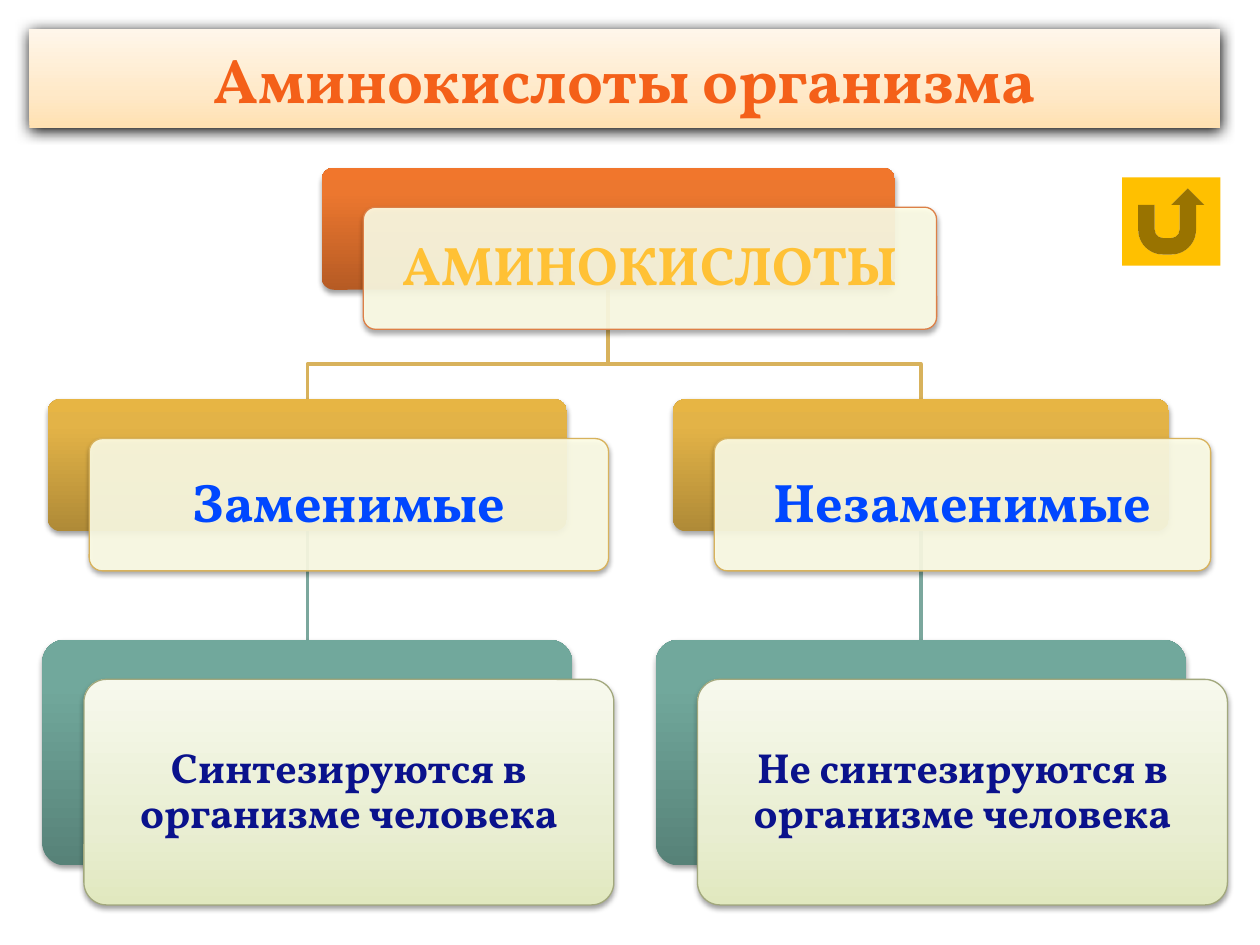
from lxml.etree import SubElement
from pptx import Presentation
from pptx.dml.color import RGBColor
from pptx.enum.shapes import MSO_CONNECTOR, MSO_SHAPE
from pptx.enum.text import MSO_ANCHOR, PP_ALIGN
from pptx.oxml.ns import qn
from pptx.util import Pt

FONT = "Vollkorn"
DX, DY = 23.8, 22.6
ROOT_X, ROOT_BOTTOM, BUS_Y, CHILD_TOP = 347.6, 165.6, 208, 228
ORANGE = [(0, "B65B24"), (80, "EC772F"), (100, "F1762C")]
GOLD = [(0, "AF8A37"), (80, "E3B347"), (100, "E7B544")]
TEAL = [(0, "578278"), (80, "71A89C"), (100, "70AA9D")]
PALE = [(0, "E1E8BF"), (35, "E9EED2"), (100, "F7F9ED")]
PEACH = [(0, "FFE1B2"), (35, "FFE9C8"), (100, "FFF6EA")]
BRANCHES = [
    (175.6, 296.8, "Заменимые", "Синтезируются в организме человека"),
    (526.2, 283.6, "Незаменимые", "Не синтезируются в организме человека"),
]


def rgb(color):
    return RGBColor.from_string(color)


def add_alpha(el, percent):
    SubElement(el, qn("a:alpha"), val=str(percent * 1000))


def set_fill(sp, fill):
    if isinstance(fill, str):
        sp.fill.solid()
        sp.fill.fore_color.rgb = rgb(fill)
        return
    sp.fill.gradient()
    sp.fill.gradient_angle = 90
    stops = sp._element.spPr.find(qn("a:gradFill")).find(qn("a:gsLst"))
    for gs in list(stops):
        stops.remove(gs)
    for pos, color in fill:
        gs = SubElement(stops, qn("a:gs"), pos=str(pos * 1000))
        SubElement(gs, qn("a:srgbClr"), val=color)


def set_shadow(sp, alpha, blur, dist):
    effects = sp._element.spPr.find(qn("a:effectLst"))
    shadow = SubElement(effects, qn("a:outerShdw"), blurRad=str(Pt(blur)),
                        dist=str(Pt(dist)), dir="5400000", rotWithShape="0")
    add_alpha(SubElement(shadow, qn("a:srgbClr"), val="000000"), alpha)


def add_box(slide, kind, x, y, w, h, fill, line=None):
    sp = slide.shapes.add_shape(kind, Pt(x), Pt(y), Pt(w), Pt(h))
    sp.shadow.inherit = False
    set_fill(sp, fill)
    if line:
        sp.line.color.rgb = rgb(line)
        sp.line.width = Pt(0.75)
    else:
        sp.line.fill.background()
    return sp


def set_text(sp, text, size, color, spacing=1.0, margin=7.2):
    tf = sp.text_frame
    tf.word_wrap = True
    tf.vertical_anchor = MSO_ANCHOR.MIDDLE
    tf.margin_left = tf.margin_right = Pt(margin)
    tf.margin_top = tf.margin_bottom = Pt(margin if spacing < 1 else 3.6)
    p = tf.paragraphs[0]
    p.text = text
    p.alignment = PP_ALIGN.CENTER
    p.line_spacing = spacing
    p.font.name = FONT
    p.font.size = Pt(size)
    p.font.bold = True
    p.font.color.rgb = rgb(color)


def add_node(slide, center, y, w, h, back_fill, card_fill, line, text, size, color):
    x = center - w / 2
    kind = MSO_SHAPE.ROUNDED_RECTANGLE
    back = add_box(slide, kind, x, y, w, h, back_fill)
    card = add_box(slide, kind, x + DX, y + DY, w, h, card_fill, line)
    for sp in (back, card):
        sp.adjustments[0] = 0.1
        set_shadow(sp, 36, 3.1, 1.7)
    if isinstance(card_fill, str):
        add_alpha(card._element.spPr.find(qn("a:solidFill"))[0], 90)
    set_text(card, text, size, color, 0.9, 9 if size > 30 else 7.2)
    return back


def style_line(sp, color):
    sp.line.color.rgb = rgb(color)
    sp.line.width = Pt(2)


def send_to_back(slide, sp):
    slide.shapes._spTree.insert(2, sp._element)


def add_elbow(slide, x):
    builder = slide.shapes.build_freeform(Pt(ROOT_X), Pt(ROOT_BOTTOM))
    points = [(ROOT_X, BUS_Y), (x, BUS_Y), (x, CHILD_TOP)]
    builder.add_line_segments([(Pt(a), Pt(b)) for a, b in points], close=False)
    sp = builder.convert_to_shape()
    sp.shadow.inherit = False
    sp.fill.background()
    style_line(sp, "D8B25C")
    send_to_back(slide, sp)


def add_link(slide, upper, lower):
    c = slide.shapes.add_connector(MSO_CONNECTOR.STRAIGHT, 0, 0, 0, 0)
    c.begin_connect(upper, 2)
    c.end_connect(lower, 0)
    style_line(c, "7BA79D")
    SubElement(c._element.spPr, qn("a:effectLst"))
    send_to_back(slide, c)


def main():
    prs = Presentation()
    prs.slide_width, prs.slide_height = Pt(720), Pt(540)
    slide = prs.slides.add_slide(prs.slide_layouts[6])

    title = add_box(slide, MSO_SHAPE.RECTANGLE, 16.8, 16.8, 680.4, 56.2, PEACH)
    set_shadow(title, 100, 8.5, 1)
    set_text(title, "Аминокислоты организма", 36, "F46019")

    add_node(slide, ROOT_X, 95.8, 327.6, 69.8, ORANGE, "FFFFE7", "DD8047",
             "АМИНОКИСЛОТЫ", 31, "FFC135")
    for x, width, name, note in BRANCHES:
        child = add_node(slide, x, CHILD_TOP, width, 75.6, GOLD, "FFFFE7",
                         "D8B25C", name, 31, "0047FF")
        leaf = add_node(slide, x, 365.6, 302.8, 128.9, TEAL, PALE,
                        "A2A87D", note, 24, "0A128C")
        add_elbow(slide, x)
        add_link(slide, child, leaf)

    add_box(slide, MSO_SHAPE.ACTION_BUTTON_RETURN, 641.2, 101.4, 56.2, 50.4, "FFC000")
    prs.save("out.pptx")


if __name__ == "__main__":
    main()
